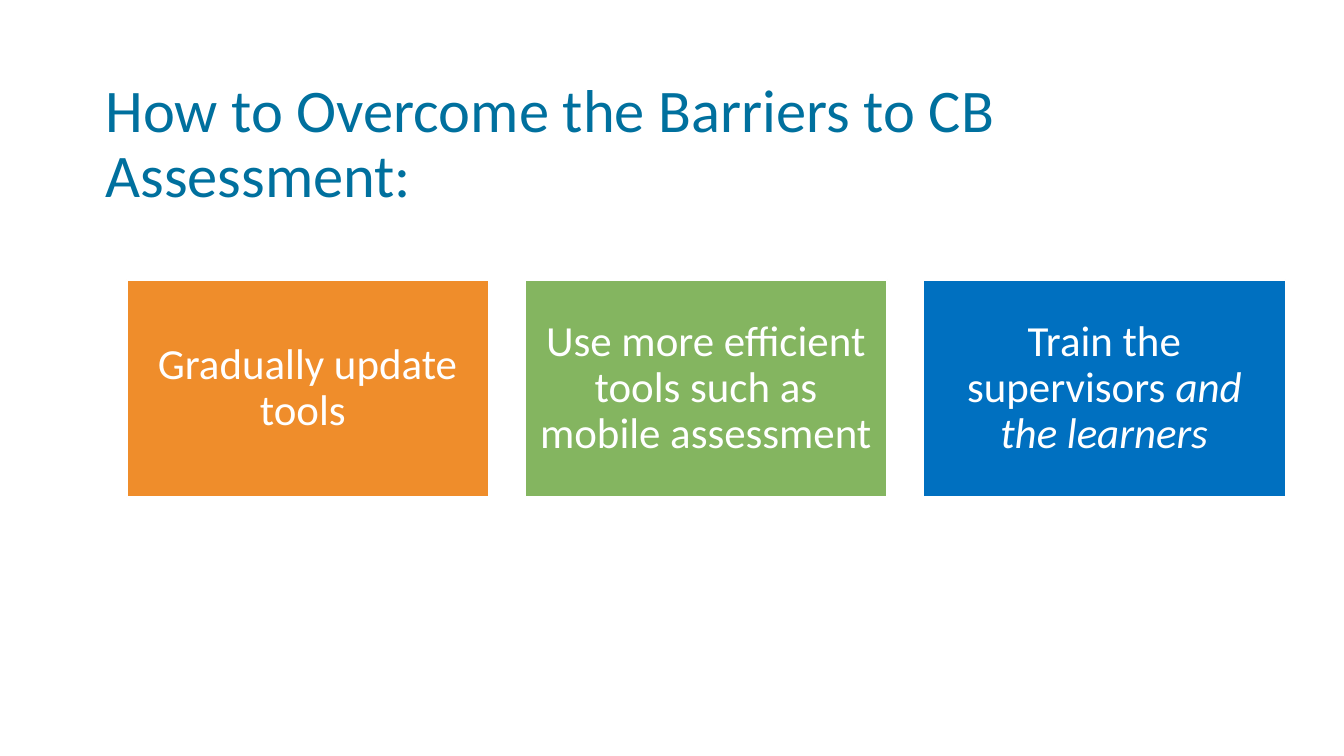
import pptx
import pptx.dml.color
import pptx.enum.shapes
import pptx.enum.text
import pptx.util

Pt = pptx.util.Pt
RGBColor = pptx.dml.color.RGBColor
ALIGN = pptx.enum.text.PP_ALIGN
ANCHOR = pptx.enum.text.MSO_ANCHOR

TEAL = RGBColor(0x00, 0x70, 0x9E)
ORANGE = RGBColor(0xEF, 0x8D, 0x2B)
GREEN = RGBColor(0x84, 0xB5, 0x60)
BLUE = RGBColor(0x00, 0x70, 0xC0)
WHITE = RGBColor(0xFF, 0xFF, 0xFF)


def write_text(shape, text, italic_text="", size=23, color=WHITE,
               alignment=ALIGN.CENTER, anchor=ANCHOR.MIDDLE, side=7.2, top=7.2):
    frame = shape.text_frame
    frame.word_wrap = True
    frame.vertical_anchor = anchor
    frame.margin_left = frame.margin_right = Pt(side)
    frame.margin_top = frame.margin_bottom = Pt(top)
    paragraph = frame.paragraphs[0]
    paragraph.alignment = alignment
    paragraph.line_spacing = 0.9
    for content, italic in ((text, False), (italic_text, True)):
        if content:
            run = paragraph.add_run()
            run.text = content
            run.font.name = "Calibri"
            run.font.size = Pt(size)
            run.font.italic = italic
            run.font.color.rgb = color


presentation = pptx.Presentation()
presentation.slide_width = Pt(720)
presentation.slide_height = Pt(405)
slide = presentation.slides.add_slide(presentation.slide_layouts[6])

title = slide.shapes.add_textbox(Pt(49.5), Pt(21.6), Pt(621), Pt(78.3))
write_text(title, "How to Overcome the Barriers to CB Assessment:", size=32.4,
           color=TEAL, alignment=ALIGN.LEFT, anchor=ANCHOR.TOP, top=21.4)

steps = [
    ("Gradually update tools ", "", ORANGE),
    ("Use more efficient tools such as mobile assessment", "", GREEN),
    ("Train the supervisors ", "and the learners", BLUE),
]
card_left, card_top, card_width, card_height, card_pitch = 67.9, 150, 194, 116.4, 213.4

for index, (text, italic_text, fill_color) in enumerate(steps):
    card = slide.shapes.add_shape(
        pptx.enum.shapes.MSO_SHAPE.RECTANGLE,
        Pt(card_left + index * card_pitch), Pt(card_top), Pt(card_width), Pt(card_height))
    card.shadow.inherit = False
    card.fill.solid()
    card.fill.fore_color.rgb = fill_color
    card.line.color.rgb = WHITE
    card.line.width = Pt(1)
    write_text(card, text, italic_text)

presentation.save("out.pptx")
